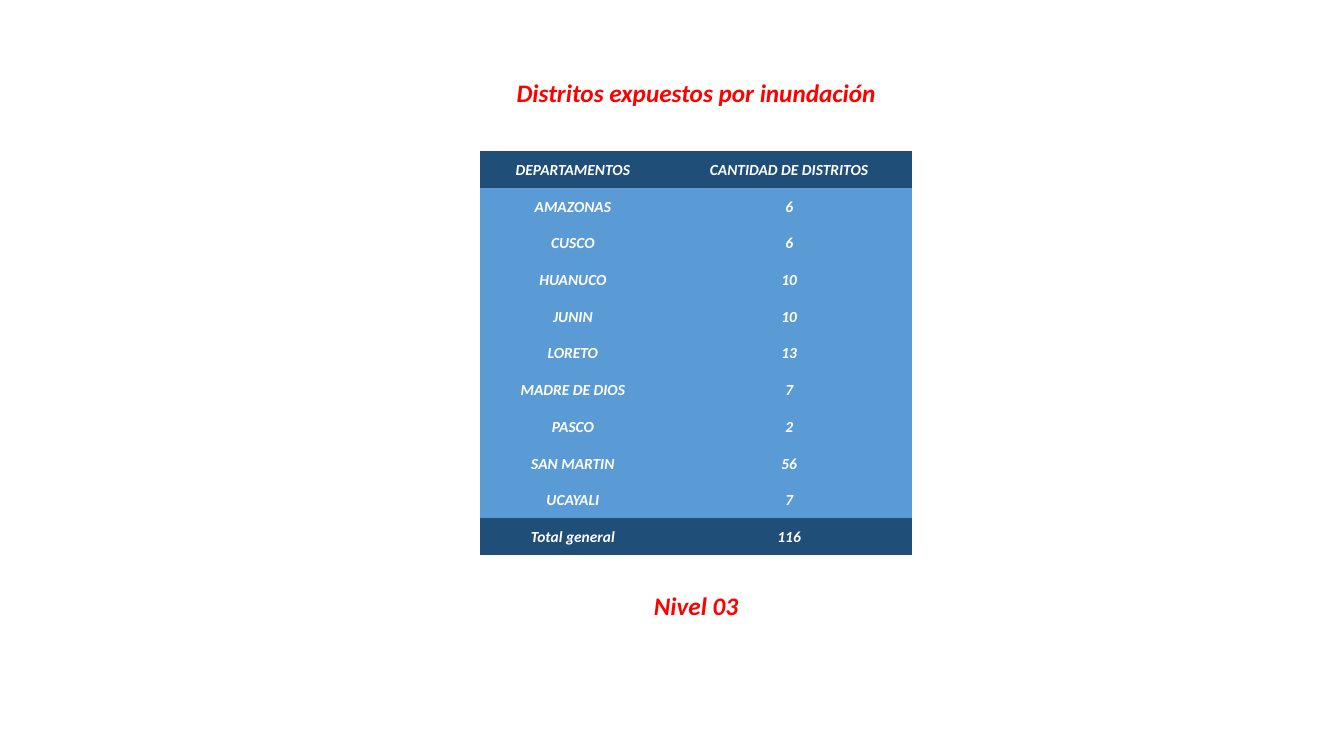
from pptx import Presentation, util as u
from pptx.dml.color import RGBColor
from pptx.enum import text as t
from pptx.oxml.ns import qn

WIDE, HIGH = 13.33, 7.5
RED, WHITE, NAVY, BLUE = "FF0000", "FFFFFF", "1F4E79", "5B9BD5"
PLAIN = "{2D5ABB26-0587-4C30-8999-92F81FD0307C}"
ROWS = [
    ("DEPARTAMENTOS", "CANTIDAD DE DISTRITOS"),
    ("AMAZONAS", "6"),
    ("CUSCO", "6"),
    ("HUANUCO", "10"),
    ("JUNIN", "10"),
    ("LORETO", "13"),
    ("MADRE DE DIOS", "7"),
    ("PASCO", "2"),
    ("SAN MARTIN", "56"),
    ("UCAYALI", "7"),
    ("Total general", "116"),
]


def paint(hue):
    return RGBColor.from_string(hue)


def write(frame, words, size, hue):
    frame.text = words
    para = frame.paragraphs[0]
    para.alignment = t.PP_ALIGN.CENTER
    font = para.runs[0].font
    font.name, font.size = "Calibri", u.Pt(size)
    font.bold = font.italic = True
    font.color.rgb = paint(hue)


def label(shape, box, words, wrap):
    shape.left, shape.top, shape.width, shape.height = map(u.Inches, box)
    frame = shape.text_frame
    write(frame, words, 18, RED)
    frame.word_wrap = wrap
    frame.auto_size = t.MSO_AUTO_SIZE.SHAPE_TO_FIT_TEXT
    frame.vertical_anchor = t.MSO_ANCHOR.TOP


def grid(slide, box):
    wide, high = box[2:]
    frame = slide.shapes.add_table(len(ROWS), 2, *map(u.Inches, box))
    for style in frame.element.iter(qn("a:tableStyleId")):
        style.text = PLAIN
    table = frame.table
    table.horz_banding = False
    for col, share in zip(table.columns, (0.43, 0.57)):
        col.width = u.Inches(wide * share)
    for r, (row, words) in enumerate(zip(table.rows, ROWS)):
        row.height = u.Inches(high / len(ROWS))
        for cell, word in zip(row.cells, words):
            cell.margin_left = cell.margin_right = cell.margin_top = u.Inches(0.01)
            cell.margin_bottom = 0
            cell.vertical_anchor = t.MSO_ANCHOR.MIDDLE
            cell.fill.solid()
            cell.fill.fore_color.rgb = paint(NAVY if r in (0, len(ROWS) - 1) else BLUE)
            write(cell.text_frame, word, 11, WHITE)


def panel(slide, box):
    left, top, wide, high = box
    mid = left + wide / 2
    label(slide.shapes.title, (mid - 1.9, top, 3.8, 0.4),
          "Distritos expuestos por inundación", False)
    note = slide.shapes.add_textbox(0, 0, 0, 0)
    label(note, (mid - 0.6, top + high - 0.4, 1.2, 0.4), "Nivel 03", True)
    grid(slide, (left, top + 0.78, wide, high - 1.48))


def main():
    deck = Presentation()
    deck.slide_width, deck.slide_height = u.Inches(WIDE), u.Inches(HIGH)
    slide = deck.slides.add_slide(deck.slide_layouts[5])
    panel(slide, (4.76, 0.72, 4.29, 5.49))
    deck.save("out.pptx")


if __name__ == "__main__":
    main()
